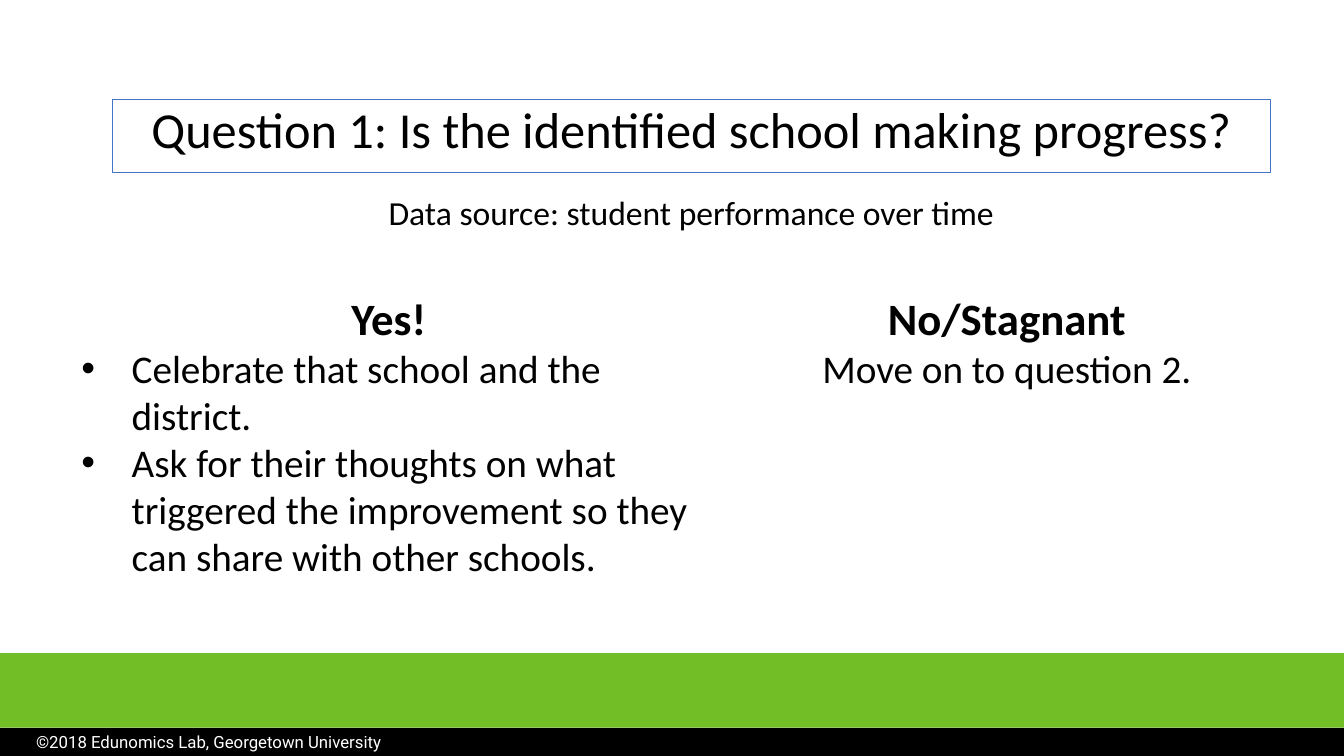
from dataclasses import dataclass
from typing import Optional

from lxml import etree
from pptx import Presentation
from pptx.dml.color import RGBColor
from pptx.enum import shapes, text
from pptx.oxml import ns
from pptx.util import Cm, Pt

WIDTH, HEIGHT = 33.87, 19.05
FOOTER_H, BAND_H = 0.71, 1.88
INDENT = 1.27


@dataclass
class Line:
    words: str
    size: int
    bold: bool = False
    bullet: bool = False
    centred: bool = True
    font: str = "Calibri"
    colour: str = "000000"
    spacing: Optional[float] = None


@dataclass
class Box:
    left: float
    top: float
    width: float
    height: float
    lines: tuple[Line, ...] = ()
    fill: Optional[str] = None
    outline: Optional[str] = None


BOXES = [
    Box(2.84, 2.51, 29.18, 1.83, outline="4472C4", lines=(
        Line("Question 1: Is the identified school making progress?", 36, spacing=0.9),)),
    Box(1.8, 7.19, 16, 7.62, lines=(
        Line("Yes!", 32, bold=True),
        Line("Celebrate that school and the district.", 28, bullet=True, centred=False),
        Line("Ask for their thoughts on what triggered the improvement so they can "
             "share with other schools.", 28, bullet=True, centred=False))),
    Box(18.72, 7.19, 13.31, 2.82, lines=(
        Line("No/Stagnant", 32, bold=True),
        Line("Move on to question 2.", 28))),
    Box(0, HEIGHT - FOOTER_H, WIDTH, FOOTER_H, fill="000000"),
    Box(0.66, 18.31, 15.7, 0.76, lines=(
        Line("©2018 Edunomics Lab, Georgetown University", 12, centred=False,
             font="Roboto", colour="FFFFFF"),)),
    Box(0, HEIGHT - FOOTER_H - BAND_H, WIDTH, BAND_H, fill="72BE26"),
    Box(3.78, 4.7, 27.28, 1.27, lines=(
        Line("Data source: student performance over time", 24),)),
]


def rgb(value: str) -> RGBColor:
    return RGBColor.from_string(value)


def add_bullet(p) -> None:
    ppr = p._p.get_or_add_pPr()
    ppr.set("marL", str(Cm(INDENT)))
    ppr.set("indent", str(-Cm(INDENT)))
    etree.SubElement(ppr, ns.qn("a:buFont"), typeface="Arial")
    etree.SubElement(ppr, ns.qn("a:buChar"), char="•")


def write_line(p, line: Line) -> None:
    if line.bullet:
        add_bullet(p)
    p.alignment = text.PP_ALIGN.CENTER if line.centred else text.PP_ALIGN.LEFT
    if line.spacing:
        p.line_spacing = line.spacing
    r = p.add_run()
    r.text = line.words
    formats = {"name": line.font, "size": Pt(line.size), "bold": line.bold}
    for name, value in formats.items():
        setattr(r.font, name, value)
    r.font.color.rgb = rgb(line.colour)


def draw_box(slide, box: Box) -> None:
    """Draw a text box, or a rectangle if the box has a fill or an outline."""
    frame = [Cm(v) for v in (box.left, box.top, box.width, box.height)]
    if box.fill or box.outline:
        sp = slide.shapes.add_shape(shapes.MSO_SHAPE.RECTANGLE, *frame)
        sp.shadow.inherit = False
        if box.fill:
            sp.fill.solid()
            sp.fill.fore_color.rgb = rgb(box.fill)
        else:
            sp.fill.background()
        if box.outline:
            sp.line.color.rgb = rgb(box.outline)
            sp.line.width = Pt(0.75)
        else:
            sp.line.fill.background()
    else:
        sp = slide.shapes.add_textbox(*frame)
        sp.text_frame.auto_size = text.MSO_AUTO_SIZE.SHAPE_TO_FIT_TEXT
    tf = sp.text_frame
    formats = {"word_wrap": True, "vertical_anchor": text.MSO_ANCHOR.TOP}
    for name, value in formats.items():
        setattr(tf, name, value)
    for i, line in enumerate(box.lines):
        write_line(tf.add_paragraph() if i else tf.paragraphs[0], line)


def main() -> None:
    prs = Presentation()
    prs.slide_width, prs.slide_height = Cm(WIDTH), Cm(HEIGHT)
    slide = prs.slides.add_slide(prs.slide_layouts[6])
    for box in BOXES:
        draw_box(slide, box)
    prs.save("out.pptx")


if __name__ == "__main__":
    main()
